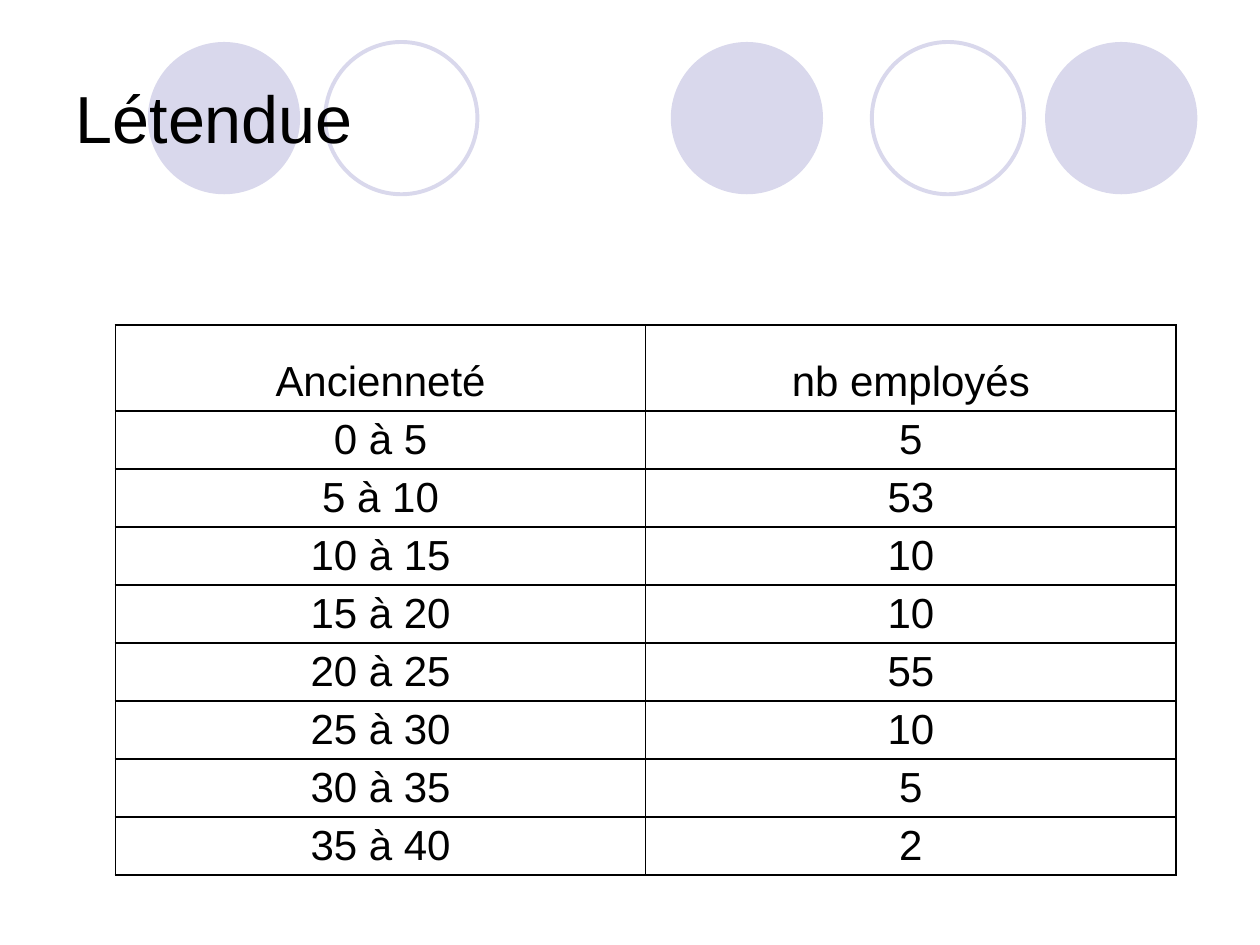
from lxml import etree
from pptx import Presentation
from pptx.dml.color import RGBColor
from pptx.enum.shapes import MSO_SHAPE
from pptx.enum.text import MSO_ANCHOR, MSO_AUTO_SIZE, PP_ALIGN
from pptx.oxml.ns import qn
from pptx.util import Pt

OVAL = MSO_SHAPE.OVAL
MIDDLE, BOTTOM = MSO_ANCHOR.MIDDLE, MSO_ANCHOR.BOTTOM
LEFT, CENTER = PP_ALIGN.LEFT, PP_ALIGN.CENTER
NO_AUTOFIT = MSO_AUTO_SIZE.NONE

COLORS = {"text": "000000", "border": "000000", "circle": "D9D8EC"}
FONT = "Arial"
CIRCLES = [(383.3, True), (597.2, True), (84.5, True), (498.2, False), (185.8, False)]
ROWS = [
    ("Ancienneté", "nb employés"),
    ("0 à 5", "5"),
    ("5 à 10", "53"),
    ("10 à 15", "10"),
    ("15 à 20", "10"),
    ("20 à 25", "55"),
    ("25 à 30", "10"),
    ("30 à 35", "5"),
    ("35 à 40", "2"),
]


def color(name):
    """Return a named colour."""
    return RGBColor.from_string(COLORS[name])


def write_text(paragraph, text, size, alignment):
    """Add one formatted run to a paragraph."""
    paragraph.alignment = alignment
    run = paragraph.add_run()
    run.text = text
    run.font.name = FONT
    run.font.size = Pt(size)
    run.font.color.rgb = color("text")


def add_circles(slide, top, diameter):
    """Place the row of filled and outlined circles."""
    for left, filled in CIRCLES:
        circle = slide.shapes.add_shape(OVAL, Pt(left), Pt(top), Pt(diameter), Pt(diameter))
        circle.shadow.inherit = False
        if filled:
            circle.fill.solid()
            circle.fill.fore_color.rgb = color("circle")
            circle.line.fill.background()
        else:
            circle.fill.background()
            circle.line.color.rgb = color("circle")
            circle.line.width = Pt(2.25)


def place_title(slide, text, left, top, width, height):
    """Format the title placeholder and bring it in front of the circles."""
    title = slide.shapes.title
    title.left, title.top, title.width, title.height = Pt(left), Pt(top), Pt(width), Pt(height)
    frame = title.text_frame
    frame.auto_size = NO_AUTOFIT
    frame.word_wrap = True
    frame.vertical_anchor = MIDDLE
    write_text(frame.paragraphs[0], text, 38, LEFT)
    slide.shapes._spTree.append(title._element)


def set_borders(cell, width):
    """Draw a solid line on all four sides of a cell."""
    properties = cell._tc.get_or_add_tcPr()
    for position, side in enumerate(("a:lnL", "a:lnR", "a:lnT", "a:lnB")):
        line = etree.Element(qn(side), w=str(Pt(width)))
        fill = etree.SubElement(line, qn("a:solidFill"))
        etree.SubElement(fill, qn("a:srgbClr"), val=COLORS["border"])
        properties.insert(position, line)


def fill_cell(cell, text):
    """Write a centred, bordered cell without background."""
    cell.fill.background()
    cell.vertical_anchor = BOTTOM
    cell.margin_top = cell.margin_bottom = Pt(3.2)
    paragraph = cell.text_frame.paragraphs[0]
    write_text(paragraph, text, 24, CENTER)
    properties = paragraph._p.get_or_add_pPr()
    properties.set("marL", str(Pt(27.4)))
    properties.set("indent", str(Pt(-27.4)))
    set_borders(cell, 1)


def add_seniority_table(slide, left, top, width, header_height, row_height):
    """Place the table of employees by seniority."""
    height = header_height + row_height * (len(ROWS) - 1)
    frame = slide.shapes.add_table(
        len(ROWS), len(ROWS[0]), Pt(left), Pt(top), Pt(width), Pt(height)
    )
    table = frame.table
    table.first_row = table.horz_banding = False
    for row_index, values in enumerate(ROWS):
        table.rows[row_index].height = Pt(row_height if row_index else header_height)
        for column_index, text in enumerate(values):
            fill_cell(table.cell(row_index, column_index), text)


def main():
    """Build and save the presentation."""
    presentation = Presentation()
    presentation.slide_width, presentation.slide_height = Pt(720), Pt(540)
    slide = presentation.slides.add_slide(presentation.slide_layouts[5])
    add_circles(slide, 24, 87)
    place_title(slide, "Létendue", 36, 21.6, 648, 90)
    add_seniority_table(slide, 66, 185.8, 606, 49.2, 30.4)
    presentation.save("out.pptx")


if __name__ == "__main__":
    main()
